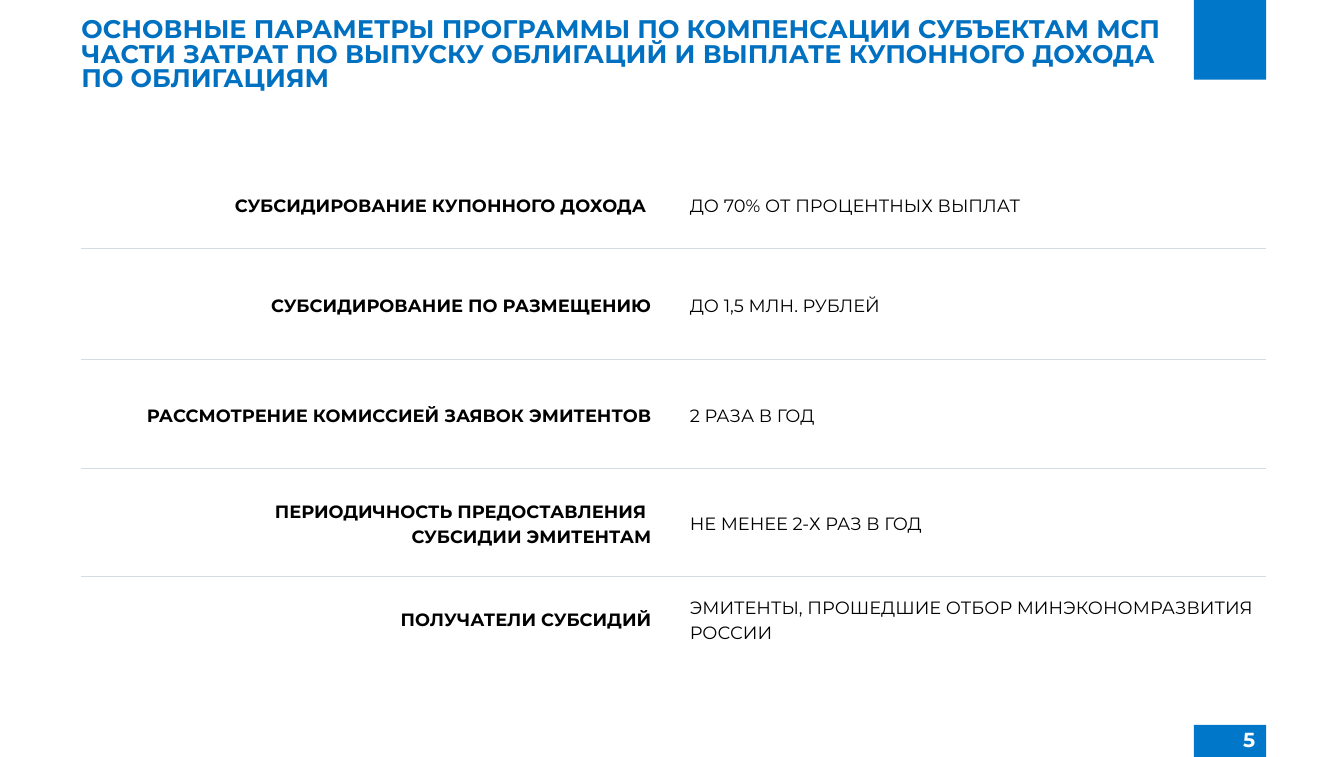
from dataclasses import dataclass

from lxml.etree import SubElement
from pptx import Presentation
from pptx.dml.color import RGBColor
from pptx.enum.shapes import MSO_SHAPE
from pptx.enum.text import MSO_ANCHOR, MSO_AUTO_SIZE, PP_ALIGN
from pptx.oxml.ns import qn
from pptx.util import Inches, Pt

TITLE = (
    "ОСНОВНЫЕ ПАРАМЕТРЫ ПРОГРАММЫ ПО КОМПЕНСАЦИИ СУБЪЕКТАМ МСП "
    "ЧАСТИ ЗАТРАТ ПО ВЫПУСКУ ОБЛИГАЦИЙ И ВЫПЛАТЕ КУПОННОГО ДОХОДА "
    "ПО ОБЛИГАЦИЯМ"
)
PAGE_NUMBER = "5"

# Row height, label lines, value
PARAMETERS = [
    (0.97, ["СУБСИДИРОВАНИЕ КУПОННОГО ДОХОДА "], "ДО 70% ОТ ПРОЦЕНТНЫХ ВЫПЛАТ"),
    (1.21, ["СУБСИДИРОВАНИЕ ПО РАЗМЕЩЕНИЮ"], "ДО 1,5 МЛН. РУБЛЕЙ"),
    (1.19, ["РАССМОТРЕНИЕ КОМИССИЕЙ ЗАЯВОК ЭМИТЕНТОВ"], "2 РАЗА В ГОД"),
    (1.18, ["ПЕРИОДИЧНОСТЬ ПРЕДОСТАВЛЕНИЯ ", "СУБСИДИИ ЭМИТЕНТАМ"],
     "НЕ МЕНЕЕ 2-Х РАЗ В ГОД"),
    (0.92, ["ПОЛУЧАТЕЛИ СУБСИДИЙ"],
     "ЭМИТЕНТЫ, ПРОШЕДШИЕ ОТБОР МИНЭКОНОМРАЗВИТИЯ РОССИИ"),
]
COLUMN_WIDTHS = [6.28, 0.37, 6.3]
SLIDE_WIDTH, SLIDE_HEIGHT = 14.69, 8.27
LEFT, TABLE_TOP = 0.89, 1.75
ACCENT_LEFT, ACCENT_WIDTH = 13.05, 0.79
ACCENT_BANDS = [(0, 0.87), (7.92, 0.35)]


@dataclass(frozen=True)
class Theme:
    font: str = "Montserrat"
    title: str = "0070C0"
    accent: str = "0077C8"
    text: str = "000000"
    paper: str = "FFFFFF"
    rule: str = "D3DBE3"
    title_size: int = 20
    number_size: int = 16
    table_size: int = 14
    rule_width: int = 1


THEME = Theme()


def paint(fill, color):
    fill.solid()
    fill.fore_color.rgb = RGBColor.from_string(color)


def add_span(para, text, size, color, bold):
    span = para.add_run()
    span.text = text
    span.font.name = THEME.font
    span.font.size = Pt(size)
    span.font.bold = bold
    span.font.color.rgb = RGBColor.from_string(color)


def set_margins(target, horizontal, vertical):
    target.margin_left = target.margin_right = Inches(horizontal)
    target.margin_top = target.margin_bottom = Inches(vertical)


def add_accent(page, top, height):
    band = page.shapes.add_shape(
        MSO_SHAPE.RECTANGLE, Inches(ACCENT_LEFT), Inches(top),
        Inches(ACCENT_WIDTH), Inches(height))
    band.shadow.inherit = False
    paint(band.fill, THEME.accent)
    band.line.fill.background()


def fill_title(title):
    title.left, title.top = Inches(LEFT), Inches(0.6)
    title.width, title.height = Inches(11.97), Inches(0.41)
    frame = title.text_frame
    frame.auto_size = MSO_AUTO_SIZE.NONE
    frame.word_wrap = True
    frame.vertical_anchor = MSO_ANCHOR.BOTTOM
    set_margins(frame, 0, 0)
    para = frame.paragraphs[0]
    para.alignment = PP_ALIGN.LEFT
    para.line_spacing = 0.8
    para.space_before = Pt(0)
    add_span(para, TITLE, THEME.title_size, THEME.title, True)


def add_page_number(page):
    box = page.shapes.add_textbox(
        Inches(13.49), Inches(7.9), Inches(0.33), Inches(0.37))
    box.text_frame.word_wrap = False
    box.text_frame.auto_size = MSO_AUTO_SIZE.SHAPE_TO_FIT_TEXT
    add_span(box.text_frame.paragraphs[0], PAGE_NUMBER,
             THEME.number_size, THEME.paper, True)


def set_borders(cell, ruled_edges):
    """Rule the named edges (T, B) and clear the other ones."""
    properties = cell._tc.get_or_add_tcPr()
    for edge in "LRTB":
        line = SubElement(properties, qn(f"a:ln{edge}"))
        if edge in ruled_edges:
            line.set("w", str(Pt(THEME.rule_width)))
            solid = SubElement(line, qn("a:solidFill"))
            SubElement(solid, qn("a:srgbClr")).set("val", THEME.rule)
        else:
            line.set("w", "0")
            SubElement(line, qn("a:noFill"))


def fill_cell(cell, lines, alignment, bold, side_margin):
    cell.vertical_anchor = MSO_ANCHOR.MIDDLE
    set_margins(cell, side_margin, 0.05)
    frame = cell.text_frame
    for index, line in enumerate(lines):
        para = frame.add_paragraph() if index else frame.paragraphs[0]
        para.alignment = alignment
        para.line_spacing = 1.15
        add_span(para, line, THEME.table_size, THEME.text, bold)


def add_parameters(page):
    heights = [height for height, _, _ in PARAMETERS]
    table = page.shapes.add_table(
        len(heights), len(COLUMN_WIDTHS), Inches(LEFT), Inches(TABLE_TOP),
        Inches(sum(COLUMN_WIDTHS)), Inches(sum(heights))).table
    table.first_row = table.horz_banding = False
    for column, width in zip(table.columns, COLUMN_WIDTHS):
        column.width = Inches(width)
    last = len(PARAMETERS) - 1
    for index, (height, label, value) in enumerate(PARAMETERS):
        row = table.rows[index]
        row.height = Inches(height)
        ruled_edges = ("T" if index > 0 else "") + ("B" if index < last else "")
        for cell in row.cells:
            set_borders(cell, ruled_edges)
            paint(cell.fill, THEME.paper)
        fill_cell(row.cells[0], label, PP_ALIGN.RIGHT, True, 0.05)
        fill_cell(row.cells[2], [value], PP_ALIGN.LEFT, False, 0)


def main():
    deck = Presentation()
    deck.slide_width, deck.slide_height = Inches(SLIDE_WIDTH), Inches(SLIDE_HEIGHT)
    page = deck.slides.add_slide(deck.slide_layouts.get_by_name("Title Only"))
    paint(page.background.fill, THEME.paper)
    for top, height in ACCENT_BANDS:
        add_accent(page, top, height)
    fill_title(page.shapes.title)
    add_page_number(page)
    add_parameters(page)
    deck.save("out.pptx")


if __name__ == "__main__":
    main()
